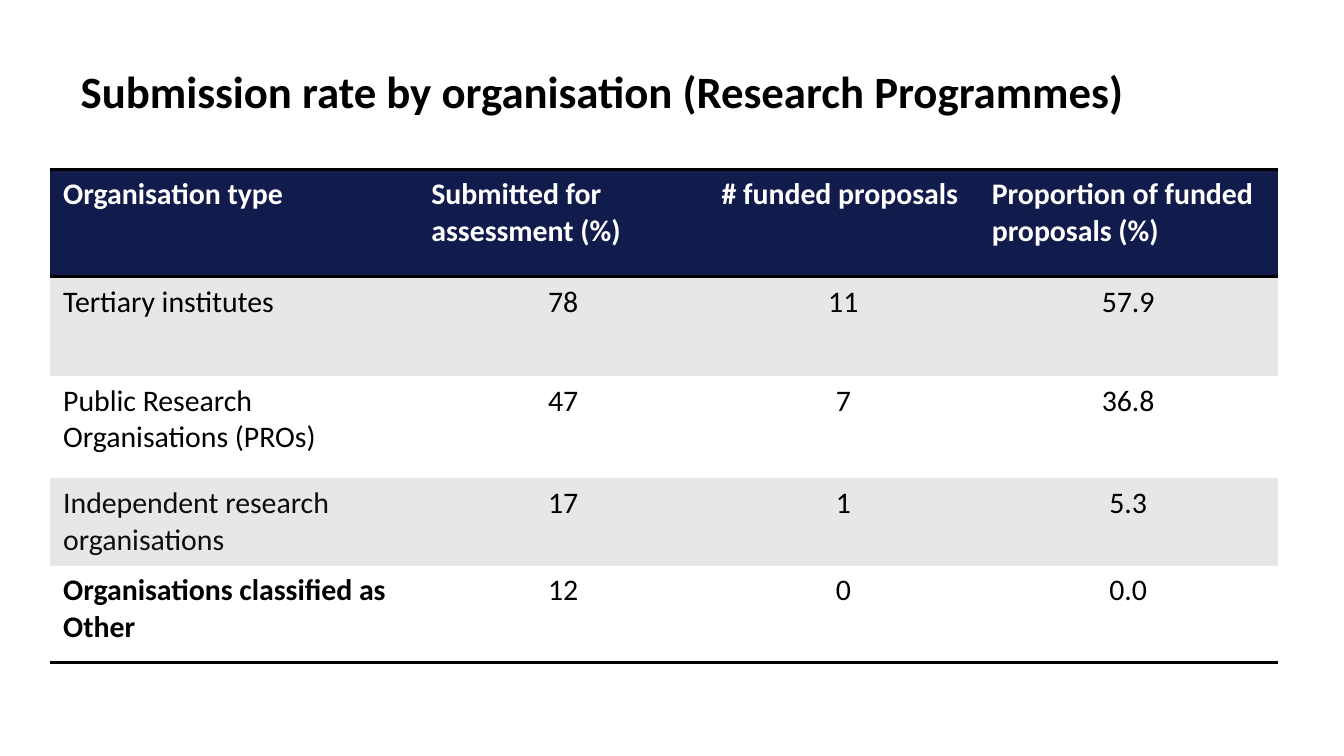
from lxml.etree import SubElement
from pptx import Presentation
from pptx.dml.color import RGBColor
from pptx.enum.text import MSO_ANCHOR as ANCHOR, PP_ALIGN as ALIGN
from pptx.oxml.ns import qn
from pptx.util import Inches, Pt

NAVY, GREY, WHITE, BLACK, NEAR_BLACK = "111C4D", "E7E7E7", "FFFFFF", "000000", "0D0D0D"


def add_text(paragraph, text, size, color, bold):
    run = paragraph.add_run()
    run.text = text
    run.font.name = "Calibri"
    run.font.size = Pt(size)
    run.font.bold = bold
    run.font.color.rgb = RGBColor.from_string(color)


def set_borders(cell, ruled_sides):
    """Rule the given sides in black and clear the others."""
    properties = cell._tc.get_or_add_tcPr()
    for side in "LRTB":
        line = SubElement(properties, qn(f"a:ln{side}"), w=str(Pt(2)))
        if side in ruled_sides:
            fill = SubElement(line, qn("a:solidFill"))
            SubElement(fill, qn("a:srgbClr"), val=BLACK)
        else:
            SubElement(line, qn("a:noFill"))


# Widescreen slide, 16:9
prs = Presentation()
prs.slide_width, prs.slide_height = Inches(10), Inches(10 * 9 / 16)
slide = prs.slides.add_slide(prs.slide_layouts[5])

# Title
title = slide.shapes.title
title.left, title.top = Inches(0.5), Inches(0.23)
title.width, title.height = Inches(9), Inches(0.94)
title.text_frame.vertical_anchor = ANCHOR.MIDDLE
heading = title.text_frame.paragraphs[0]
heading.alignment = ALIGN.LEFT
heading.line_spacing = 0.9
add_text(heading, "Submission rate by organisation (Research Programmes)", 24, BLACK, True)

# Table content and grid
rows = [
    ("Organisation type", "Submitted for assessment (%)", "# funded proposals",
     "Proportion of funded proposals (%)"),
    ("Tertiary institutes", "78", "11", "57.9"),
    ("Public Research Organisations (PROs)", "47", "7", "36.8"),
    ("Independent research organisations", "17", "1", "5.3"),
    ("Organisations classified as Other", "12", "0", "0.0"),
]
column_widths = [2.74, 2.16, 2.01, 2.23]
row_heights = [0.8, 0.74, 0.76, 0.65, 0.72]
last = len(rows) - 1

rates = slide.shapes.add_table(
    len(rows), len(column_widths), Inches(0.37), Inches(1.26),
    Inches(sum(column_widths)), Inches(sum(row_heights))).table
for column, width in zip(rates.columns, column_widths):
    column.width = Inches(width)
for row, height in zip(rates.rows, row_heights):
    row.height = Inches(height)

# Header, banded rows and black rules
ruled_sides = {0: "TB", 1: "T", last: "B"}
for r, values in enumerate(rows):
    band = NAVY if r == 0 else GREY if r % 2 else WHITE
    for c, value in enumerate(values):
        cell = rates.cell(r, c)
        set_borders(cell, ruled_sides.get(r, ""))
        cell.fill.solid()
        cell.fill.fore_color.rgb = RGBColor.from_string(band)
        color = WHITE if r == 0 else NEAR_BLACK if (r, c) == (3, 0) else BLACK
        paragraph = cell.text_frame.paragraphs[0]
        paragraph.alignment = ALIGN.CENTER if r and c else ALIGN.LEFT
        add_text(paragraph, value, 16, color, r == 0 or (r, c) == (last, 0))

prs.save("out.pptx")
